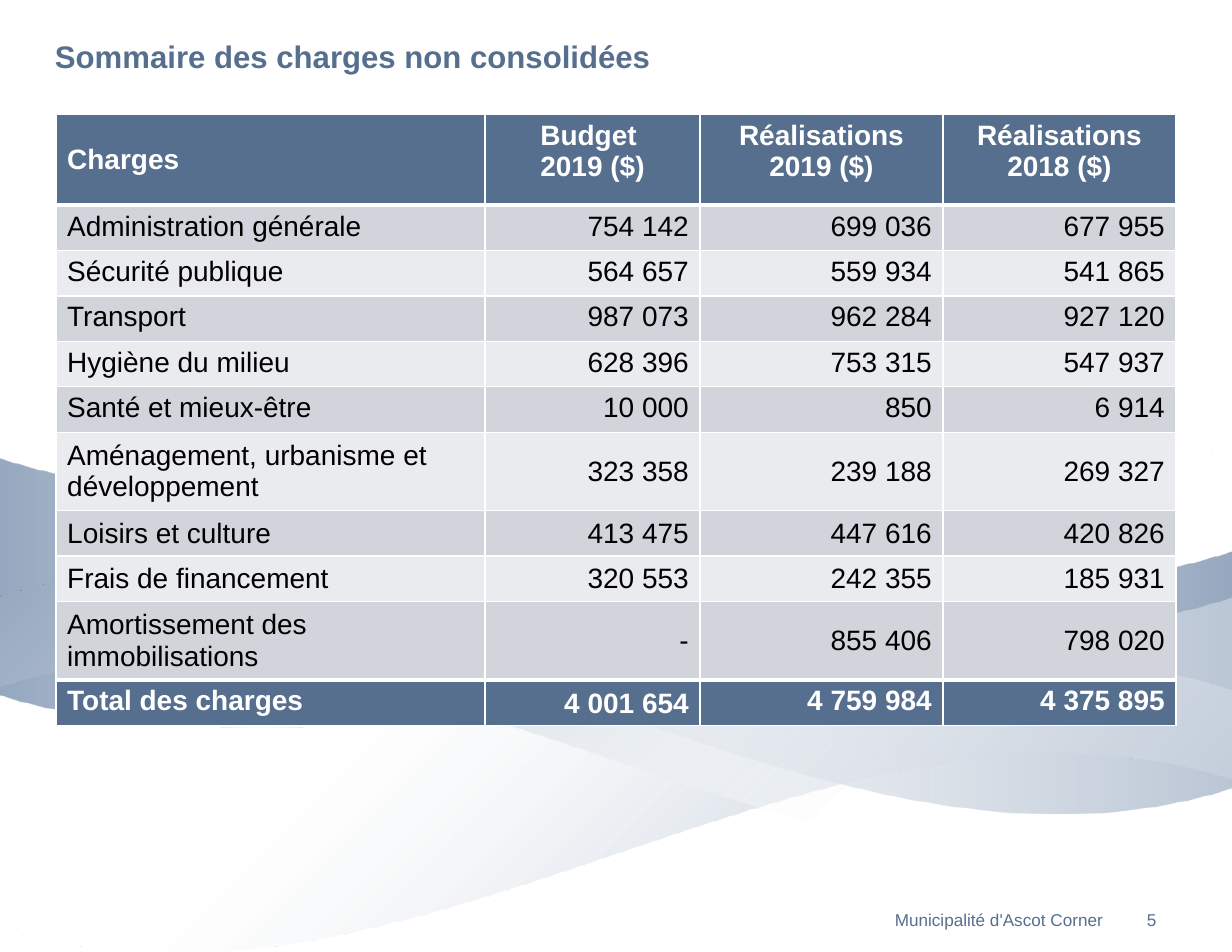
from lxml import etree
from pptx import Presentation
from pptx import util as u
from pptx.dml.color import RGBColor
from pptx.enum import text
from pptx.oxml import ns

W, H = 11, 8.5
BLUE, PALE, WHITE, BLACK = "576F8E", "96A8BF", "FFFFFF", "000000"
BANDS = ("D1D5DB", "EAEBEE")
ALIGN, ANCHOR = text.PP_ALIGN, text.MSO_ANCHOR

COLUMNS = (3.83, 1.92, 2.17, 2.08)
HEADER = ("Charges", "Budget \n2019 ($)", "Réalisations 2019 ($)", "Réalisations 2018 ($)")
CHARGES = (
    ("Administration générale", "754 142", "699 036", "677 955"),
    ("Sécurité publique", "564 657", "559 934", "541 865"),
    ("Transport", "987 073", "962 284", "927 120"),
    ("Hygiène du milieu", "628 396", "753 315", "547 937"),
    ("Santé et mieux-être", "10 000", "850", "6 914"),
    ("Aménagement, urbanisme et développement", "323 358", "239 188", "269 327"),
    ("Loisirs et culture", "413 475", "447 616", "420 826"),
    ("Frais de financement", "320 553", "242 355", "185 931"),
    ("Amortissement des immobilisations", "-", "855 406", "798 020"),
)
TOTAL = ("Total des charges", "4 001 654", "4 759 984", "4 375 895")


def rgb(color):
    return RGBColor.from_string(color)


def sub(parent, tag, **attributes):
    return etree.SubElement(parent, ns.qn(tag), attributes)


def set_gradient(sp, angle):
    """Fade from pale blue to translucent white, angle clockwise in degrees."""
    grad = etree.Element(ns.qn("a:gradFill"), rotWithShape="1")
    stops = sub(grad, "a:gsLst")
    for position, color, opacity in ((0, PALE, 100), (71, WHITE, 35)):
        stop = sub(stops, "a:gs", pos=str(position * 1000))
        clr = sub(stop, "a:srgbClr", val=color)
        if opacity < 100:
            sub(clr, "a:alpha", val=str(opacity * 1000))
    sub(grad, "a:lin", ang=str(angle * 60000), scaled="0")
    sp._element.spPr.find(ns.qn("a:custGeom")).addnext(grad)


def set_curves(sp, steps):
    """Redraw the outline from (command, points), in hundredths of an inch."""
    outline = next(sp._element.iter(ns.qn("a:path")))
    for child in list(outline):
        outline.remove(child)
    for command, points in steps:
        step = sub(outline, command)
        for x, y in points:
            sub(step, "a:pt", x=str(x), y=str(y))
    sub(outline, "a:close")


def add_wave(slide, top, mirrored, angle):
    """A ribbon across the slide; top is where its upper edge meets the sides."""
    width, height = 1100, 268
    third = width // 3
    builder = slide.shapes.build_freeform(0, 0, scale=u.Inches(1) / 100)
    builder.add_line_segments([(width, 0), (width, height), (0, height)], close=True)
    sp = builder.convert_to_shape(0, u.Inches(top - 0.34))
    sp.shadow.inherit = False
    sp.line.fill.background()
    steps = (
        ("a:moveTo", [(0, 34)]),
        ("a:cubicBezTo", [(third, -83), (2 * third, 151), (width, 34)]),
        ("a:lnTo", [(width, 245)]),
        ("a:cubicBezTo", [(2 * third, 362), (third, -3), (0, 114)]),
    )
    set_curves(sp, [(command, [(width - x if mirrored else x, y) for x, y in points])
                    for command, points in steps])
    set_gradient(sp, angle)


def add_run(p, words, size, color, bold=False):
    r = p.add_run()
    r.text = words
    r.font.name, r.font.size, r.font.bold = "Arial", u.Pt(size), bold
    r.font.color.rgb = rgb(color)


def place_title(slide, words):
    sp = slide.shapes.title
    sp.left, sp.top, sp.width, sp.height = map(u.Inches, (0.49, 0.33, 10, 0.89))
    tf = sp.text_frame
    tf.margin_left = tf.margin_right = tf.margin_top = tf.margin_bottom = 0
    tf.vertical_anchor = ANCHOR.TOP
    tf.paragraphs[0].alignment = ALIGN.LEFT
    add_run(tf.paragraphs[0], words, 20, BLUE, True)


def add_footer(slide, words, left, width, align):
    sp = slide.shapes.add_textbox(*map(u.Inches, (left, 8.11, width, 0.2)))
    tf = sp.text_frame
    tf.word_wrap = True
    tf.vertical_anchor = ANCHOR.MIDDLE
    tf.margin_left = tf.margin_right = u.Inches(0.11)
    tf.margin_top = tf.margin_bottom = u.Inches(0.06)
    p = tf.paragraphs[0]
    p.alignment, p.line_spacing = align, u.Pt(13.4)
    add_run(p, words, 11, BLUE)


def set_borders(cell, top, bottom):
    tcPr = cell._tc.get_or_add_tcPr()
    widths = (("a:lnL", 1), ("a:lnR", 1), ("a:lnT", top), ("a:lnB", bottom))
    for i, (tag, width) in enumerate(widths):
        line = etree.Element(ns.qn(tag), w=str(u.Pt(width)))
        sub(sub(line, "a:solidFill"), "a:srgbClr", val=WHITE)
        tcPr.insert(i, line)


def fill_cell(cell, words, fill, color, bold, align, anchor, top=1, bottom=1):
    cell.fill.solid()
    cell.fill.fore_color.rgb = rgb(fill)
    cell.vertical_anchor = anchor
    tf = cell.text_frame
    for i, line in enumerate(words.split("\n")):
        p = tf.add_paragraph() if i else tf.paragraphs[0]
        p.alignment = align
        add_run(p, line, 18, color, bold)
    set_borders(cell, top, bottom)


def add_charges_table(slide):
    rows = (HEADER, *CHARGES, TOTAL)
    last = len(rows) - 1
    frame = slide.shapes.add_table(len(rows), len(COLUMNS),
                                   *map(u.Inches, (0.5, 1.02, 10, 5.46)))
    table = frame.table
    for column, width in zip(table.columns, COLUMNS):
        column.width = u.Inches(width)
    for i, values in enumerate(rows):
        table.rows[i].height = u.Pt(29.2 if i else 58.4)
        strong = i in (0, last)
        fill = BLUE if strong else BANDS[(i - 1) % 2]
        for j, words in enumerate(values):
            align = ALIGN.LEFT if j == 0 else ALIGN.RIGHT if i else ALIGN.CENTER
            anchor = ANCHOR.TOP
            if (i, j) == (0, 0) or 6 <= i < last:
                anchor = ANCHOR.MIDDLE
            elif (i, j) == (last, 1):
                anchor = ANCHOR.BOTTOM
            fill_cell(table.cell(i, j), words, fill, WHITE if strong else BLACK,
                      strong, align, anchor,
                      top=3 if i in (1, last) else 1,
                      bottom=3 if i in (0, last - 1) else 1)
    frame.height = u.Inches(5.46)


def main():
    prs = Presentation()
    prs.slide_width, prs.slide_height = u.Inches(W), u.Inches(H)
    slide = prs.slides.add_slide(prs.slide_layouts[5])
    for top, mirrored, angle in ((4.92, False, 180), (6.16, True, 225),
                                 (4.09, True, 0), (5.33, False, 45)):
        add_wave(slide, top, mirrored, angle)
    add_footer(slide, "5", 10.13, 0.37, ALIGN.LEFT)
    add_footer(slide, "Municipalité d'Ascot Corner", 4.25, 5.71, ALIGN.RIGHT)
    place_title(slide, "Sommaire des charges non consolidées")
    add_charges_table(slide)
    prs.save("out.pptx")


if __name__ == "__main__":
    main()
